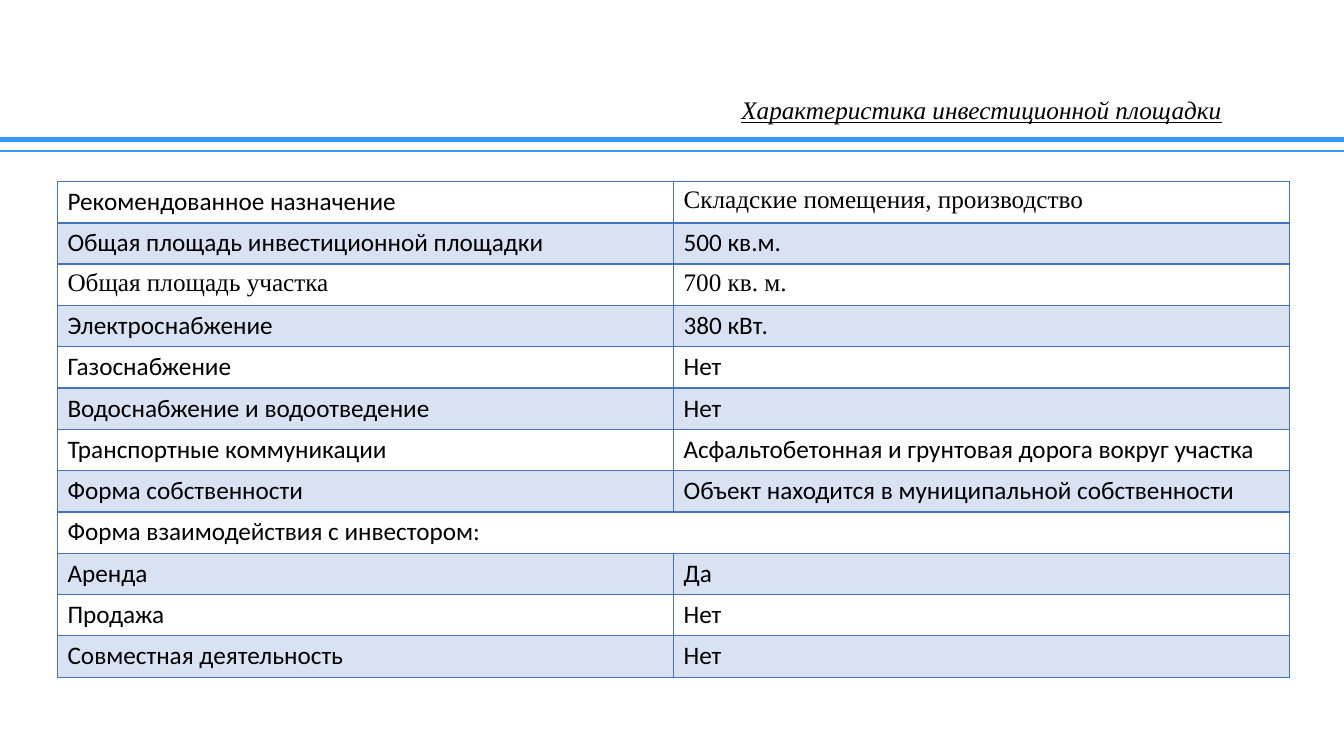
from dataclasses import dataclass

from lxml.etree import SubElement
from pptx import Presentation
from pptx.dml.color import RGBColor
from pptx.enum.shapes import MSO_CONNECTOR
from pptx.enum.text import MSO_ANCHOR, MSO_AUTO_SIZE, PP_ALIGN
from pptx.oxml.ns import qn
from pptx.util import Emu, Pt

EMU_PER_PX = 9144  # 100 px to the inch
PAGE_WIDTH, PAGE_HEIGHT = 1333, 750

BLACK = RGBColor(0x00, 0x00, 0x00)
RULE_BLUE = RGBColor(0x33, 0x99, 0xFF)
TABLE_BLUE = RGBColor(0x44, 0x72, 0xC4)
SANS, SERIF = "Calibri", "Times New Roman"

TABLE_LEFT, TABLE_TOP = 57, 180
COLUMN_WIDTH, ROW_HEIGHT = 611, 41
BAND_OPACITY = 20


@dataclass(frozen=True)
class Rule:
    y: int
    weight: float


@dataclass(frozen=True)
class SiteRow:
    label: str
    value: str | None  # None: the label spans both columns
    label_font: str = SANS
    value_font: str = SANS


RULES = [Rule(138, 3.5), Rule(150, 1.5)]

SITE_ROWS = [
    SiteRow("Рекомендованное назначение", "Складские помещения, производство", value_font=SERIF),
    SiteRow("Общая площадь инвестиционной площадки", "500 кв.м."),
    SiteRow("Общая площадь участка", "700 кв. м.", SERIF, SERIF),
    SiteRow("Электроснабжение", "380 кВт."),
    SiteRow("Газоснабжение", "Нет"),
    SiteRow("Водоснабжение и водоотведение", "Нет"),
    SiteRow("Транспортные коммуникации", "Асфальтобетонная и грунтовая дорога вокруг участка"),
    SiteRow("Форма собственности", "Объект находится в муниципальной собственности"),
    SiteRow("Форма взаимодействия с инвестором:", None),
    SiteRow("Аренда", "Да"),
    SiteRow("Продажа", "Нет"),
    SiteRow("Совместная деятельность", "Нет"),
]


def px(length: int) -> Emu:
    return Emu(length * EMU_PER_PX)


def write(frame, text: str, **font_format):
    """Put one formatted run into the frame and return its paragraph."""
    para = frame.paragraphs[0]
    span = para.add_run()
    span.text = text
    span.font.color.rgb = BLACK
    for name, value in ({"size": Pt(18)} | font_format).items():
        setattr(span.font, name, value)
    return para


def draw_title(page) -> None:
    title = page.shapes.title
    title.left, title.top, title.width, title.height = map(px, (667, 97, 613, 27))
    frame = title.text_frame
    frame_format = {
        "word_wrap": True,
        "auto_size": MSO_AUTO_SIZE.NONE,
        "vertical_anchor": MSO_ANCHOR.MIDDLE,
    }
    for name, value in frame_format.items():
        setattr(frame, name, value)
    para = write(frame, "Характеристика инвестиционной площадки",
                 name=SERIF, italic=True, underline=True)
    para.alignment = PP_ALIGN.CENTER
    para.line_spacing = 0.9


def draw_rule(page, rule: Rule) -> None:
    line = page.shapes.add_connector(
        MSO_CONNECTOR.STRAIGHT, px(0), px(rule.y), px(PAGE_WIDTH), px(rule.y))
    line.line.color.rgb = RULE_BLUE
    line.line.width = Pt(rule.weight)
    SubElement(line._element.spPr, qn("a:effectLst"))


def add_borders(cell, top: float, bottom: float) -> None:
    properties = cell._tc.get_or_add_tcPr()
    for tag, weight in {"lnL": 1, "lnR": 1, "lnT": top, "lnB": bottom}.items():
        border = SubElement(properties, qn(f"a:{tag}"), w=str(Pt(weight)))
        fill = SubElement(border, qn("a:solidFill"))
        SubElement(fill, qn("a:srgbClr"), val=str(TABLE_BLUE))


def fill_cell(cell, banded: bool) -> None:
    if not banded:
        cell.fill.background()
        return
    cell.fill.solid()
    cell.fill.fore_color.rgb = TABLE_BLUE
    color = cell._tc.tcPr.find(qn("a:solidFill")).find(qn("a:srgbClr"))
    SubElement(color, qn("a:alpha"), val=str(BAND_OPACITY * 1000))


def draw_site_table(page, site_rows: list[SiteRow]) -> None:
    table = page.shapes.add_table(
        len(site_rows), 2, px(TABLE_LEFT), px(TABLE_TOP),
        px(2 * COLUMN_WIDTH), px(len(site_rows) * ROW_HEIGHT)).table
    table.first_row = table.horz_banding = False
    for column in table.columns:
        column.width = px(COLUMN_WIDTH)
    for index, site_row in enumerate(site_rows):
        table.rows[index].height = px(ROW_HEIGHT)
        label, value = table.cell(index, 0), table.cell(index, 1)
        for cell in (label, value):
            add_borders(cell, top=2 if index == 1 else 1, bottom=2 if index == 0 else 1)
            fill_cell(cell, banded=index % 2 == 1)
        write(label.text_frame, site_row.label, name=site_row.label_font)
        if site_row.value is None:
            label.merge(value)
        else:
            write(value.text_frame, site_row.value, name=site_row.value_font)


def main() -> None:
    deck = Presentation()
    deck.slide_width, deck.slide_height = px(PAGE_WIDTH), px(PAGE_HEIGHT)
    page = deck.slides.add_slide(deck.slide_layouts.get_by_name("Title Only"))
    for rule in RULES:
        draw_rule(page, rule)
    draw_title(page)
    draw_site_table(page, SITE_ROWS)
    deck.save("out.pptx")


if __name__ == "__main__":
    main()
